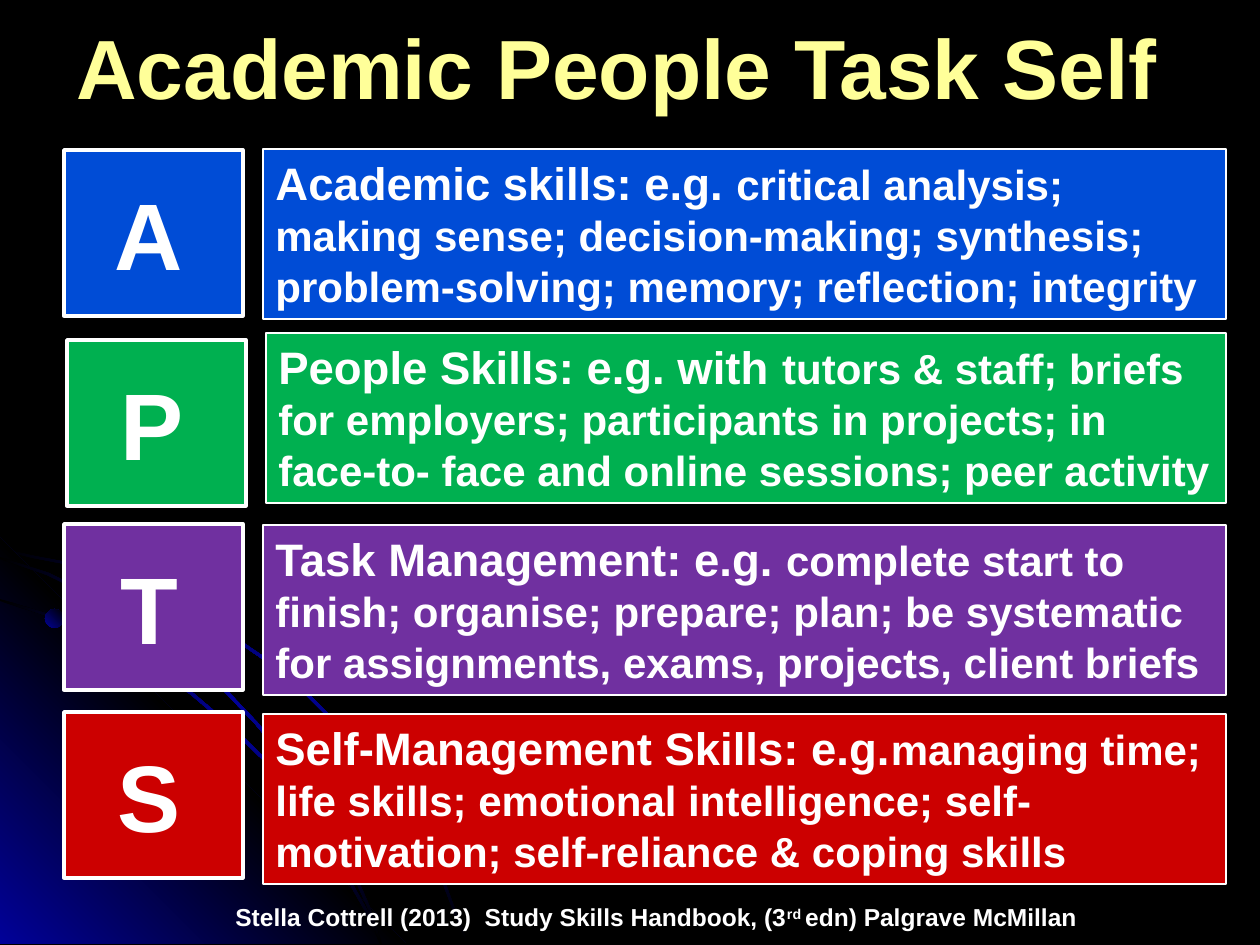
from lxml import etree
from pptx import Presentation
from pptx.dml.color import RGBColor
from pptx.enum import shapes, text
from pptx.oxml import ns
from pptx.util import Pt

PX = 914400 / 126
WIDE, HIGH = 1260, 945
INK = {"black": "000000", "navy": "010199", "white": "FFFFFF", "cream": "FFFF99",
       "blue": "004CD6", "green": "00B050", "purple": "7030A0", "red": "CC0000"}
RECT = shapes.MSO_SHAPE.RECTANGLE

ARCS = [
    [(0, 548), (35, 556), (72, 563), (123, 578), (171, 601), (219, 626), (263, 656),
     (305, 690), (343, 728), (378, 770), (410, 816), (427, 848), (444, 879),
     (456, 911), (469, 944)],
    [(0, 599), (52, 615), (100, 636), (147, 663), (192, 692), (232, 726), (271, 764),
     (305, 806), (335, 852), (360, 897), (373, 920), (382, 944)],
    [(0, 557), (49, 573), (96, 596), (140, 621), (181, 650), (221, 684), (257, 722),
     (289, 760), (320, 805), (339, 838), (355, 873), (370, 907), (382, 944)],
]

ROWS = [
    ("A", "blue", (64, 150), (263, 149), "Academic skills: e.g. ",
     "critical analysis; making sense; decision-making; synthesis; "
     "problem-solving; memory; reflection; integrity"),
    ("P", "green", (67, 340), (266, 333), "People Skills: e.g. with ",
     "tutors & staff; briefs for employers; participants in projects; in "
     "face-to- face and online sessions; peer activity"),
    ("T", "purple", (64, 524), (263, 525), "Task Management: e.g. ",
     "complete start to finish; organise; prepare; plan; be systematic "
     "for assignments, exams, projects, client briefs"),
    ("S", "red", (64, 712), (263, 714), "Self-Management Skills: e.g.",
     "managing time; life skills; emotional intelligence; "
     "self-motivation; self-reliance & coping skills"),
]


def rgb(name):
    return RGBColor.from_string(INK[name])


def emu(*vals):
    return [round(v * PX) for v in vals]


def blend(shape, names, turn):
    shape.shadow.inherit = False
    shape.line.fill.background()
    shape.fill.gradient()
    grad = shape._element.spPr.find(ns.qn("a:gradFill"))
    stops = grad.find(ns.qn("a:gsLst"))
    for stop in list(stops):
        stops.remove(stop)
    for i, name in enumerate(names):
        place = str(100000 * i // (len(names) - 1))
        stop = etree.SubElement(stops, ns.qn("a:gs"), pos=place)
        etree.SubElement(stop, ns.qn("a:srgbClr"), val=INK[name])
    lin = grad.find(ns.qn("a:lin"))
    lin.set("ang", str(turn * 60000))
    lin.set("scaled", "1")


def outline(slide, points):
    build = slide.shapes.build_freeform(*points[0], scale=PX)
    build.add_line_segments(points[1:], close=True)
    return build.convert_to_shape()


def arc(slide, edge):
    under = [(max(0, x - 2), min(944, y + 2)) for x, y in edge]
    blend(outline(slide, edge + under[::-1]), ["black", "navy", "black"], 45)


def corner(slide, box):
    x, y, w, h = box
    arc(slide, ARCS[0])
    wedge = outline(slide, [(x, y), (x + w, y + h), (x, y + h)])
    blend(wedge, ["navy", "black", "navy"], 315)
    for edge in ARCS[1:]:
        arc(slide, edge)
    ball = slide.shapes.add_shape(shapes.MSO_SHAPE.OVAL, *emu(x + 45, y + 71, 19, 19))
    blend(ball, ["navy", "black"], 315)


def panel(slide, box, fill, edge=0):
    shape = slide.shapes.add_shape(RECT, *emu(*box))
    shape.shadow.inherit = False
    shape.fill.solid()
    shape.fill.fore_color.rgb = rgb(fill)
    if edge:
        shape.line.color.rgb = rgb("white")
        shape.line.width = Pt(edge)
    else:
        shape.line.fill.background()
    return shape


def write(shape, parts, color="white", center=False, wrap=True):
    frame = shape.text_frame
    frame.word_wrap = wrap
    middle, top = text.MSO_ANCHOR.MIDDLE, text.MSO_ANCHOR.TOP
    frame.vertical_anchor = middle if center else top
    if not center:
        frame.auto_size = text.MSO_AUTO_SIZE.SHAPE_TO_FIT_TEXT
    para = frame.paragraphs[0]
    para.alignment = text.PP_ALIGN.CENTER if center else text.PP_ALIGN.LEFT
    para.font.name = "Arial"
    para.font.bold = True
    para.font.color.rgb = rgb(color)
    runs = []
    for words, size in parts:
        run = para.add_run()
        run.text = words
        run.font.size = Pt(size)
        run.font.name = "Arial"
        run.font.bold = True
        run.font.color.rgb = rgb(color)
        runs.append(run)
    return runs


def skill(slide, row):
    mark, color, tile, body, head, rest = row
    write(panel(slide, (*tile, 179, 166), color, 2), [(mark, 54), (" ", 18)], center=True)
    box = (*body, 1226 - body[0], 170)
    write(panel(slide, box, color, 0.75), [(head, 26), (rest, 24)])


def title(slide, box):
    write(panel(slide, box, "black"), [("Academic People Task Self", 48)], "cream")


def credit(slide, box):
    note = slide.shapes.add_textbox(*emu(*box))
    parts = ["Stella Cottrell (2013)  Study Skills Handbook, (3", "rd ",
             "edn) Palgrave McMillan"]
    runs = write(note, [(part, 14) for part in parts], wrap=False)
    runs[1].font._element.set("baseline", "30000")


def main():
    deck = Presentation()
    deck.slide_width, deck.slide_height = emu(WIDE, HIGH)
    slide = deck.slides.add_slide(deck.slide_layouts[6])
    slide.background.fill.solid()
    slide.background.fill.fore_color.rgb = rgb("black")
    corner(slide, (0, 538, 406, 406))
    for row in ROWS:
        skill(slide, row)
    title(slide, (64, 9, 1131, 115))
    credit(slide, (223, 896, 874, 43))
    deck.save("out.pptx")


if __name__ == "__main__":
    main()
